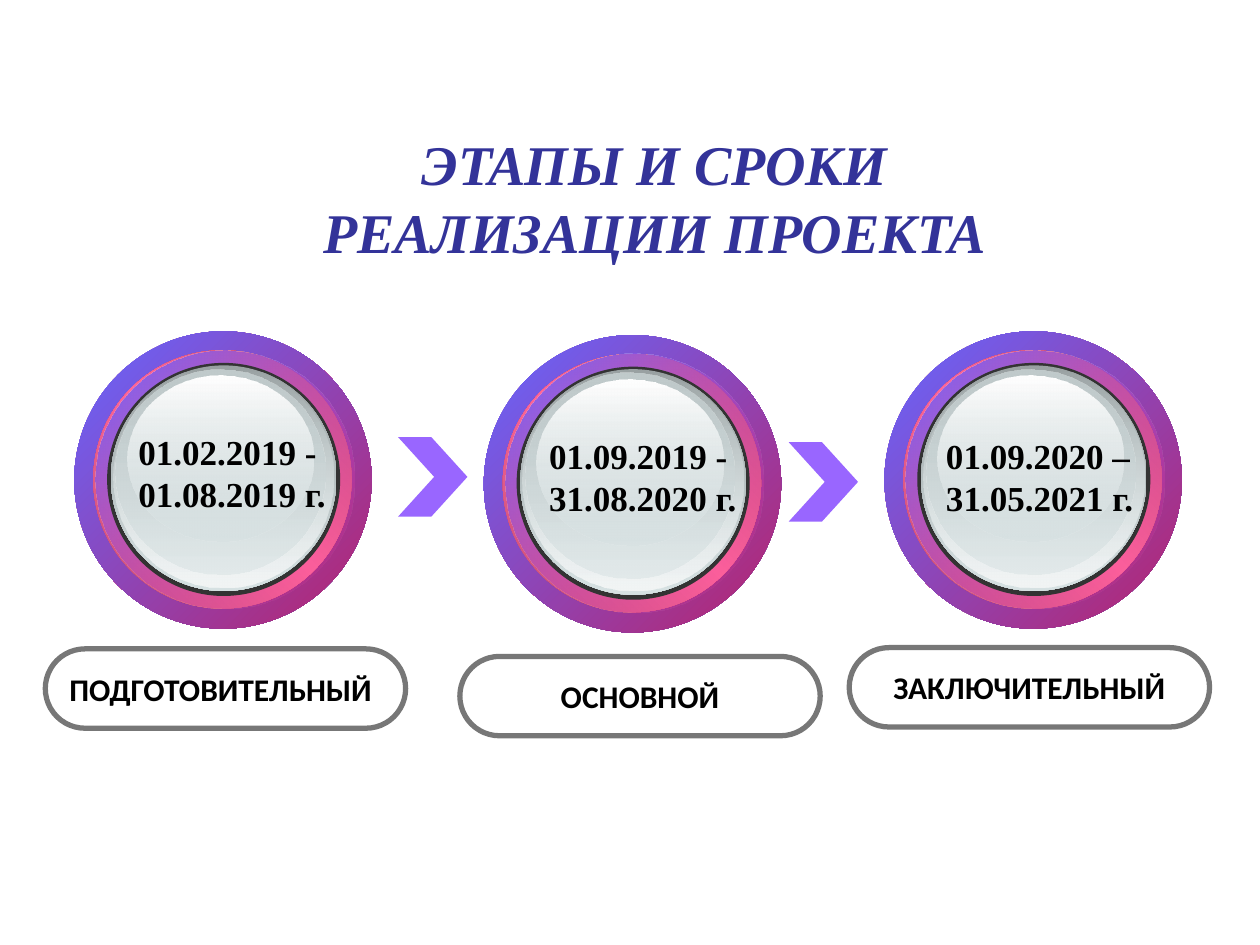
from typing import NamedTuple

from lxml.etree import SubElement
from pptx import Presentation
from pptx.dml.color import RGBColor
from pptx.enum.shapes import MSO_SHAPE
from pptx.enum.text import MSO_ANCHOR, MSO_AUTO_SIZE, PP_ALIGN
from pptx.oxml.ns import qn
from pptx.util import Emu, Pt

SCALE = 9144  # EMU per px, 100 px to the inch
ROMAN = "Times New Roman"


class Stop(NamedTuple):
    pos: int
    color: str
    alpha: int = 100


class Layer(NamedTuple):
    """One ellipse of a disk, placed from the disk's corner."""
    x: int
    y: int
    w: int
    h: int
    angle: int
    stops: tuple[Stop, ...]


class Stage(NamedTuple):
    name: str
    dates: tuple[str, str]
    disk: tuple[int, int]
    text: tuple[int, int]
    pill: tuple[int, int]
    align: PP_ALIGN


LAYERS = (
    Layer(0, 0, 236, 236, 45, (Stop(0, "FFFFFF"), Stop(50, "FF3399"), Stop(100, "FFFFFF"))),
    Layer(0, 0, 236, 236, 45, (Stop(0, "6666FF"), Stop(100, "B6246D"))),
    Layer(15, 15, 205, 205, 315, (Stop(0, "C34E75"), Stop(50, "FF6699"), Stop(100, "C34E75"))),
    Layer(17, 15, 205, 205, 45, (Stop(0, "6666FF"), Stop(100, "FF3399", 0))),
    Layer(26, 25, 185, 185, 0, (Stop(0, "333333"),)),
    Layer(29, 27, 179, 179, 90, (Stop(0, "99A1A2"), Stop(100, "D6E1E2"))),
    Layer(31, 28, 175, 175, 90, (Stop(0, "D6E1E2", 0), Stop(100, "F2F5F5"))),
    Layer(33, 30, 166, 163, 90, (Stop(0, "C1CBCC"), Stop(100, "D6E1E2", 48))),
    Layer(42, 35, 148, 132, 90, (Stop(0, "FFFFFF"), Stop(100, "D6E1E2", 38))),
)

STAGES = (
    Stage("ПОДГОТОВИТЕЛЬНЫЙ", ("01.02.2019 -", "01.08.2019 г."),
          (59, 263), (100, 337), (36, 515), PP_ALIGN.LEFT),
    Stage("ОСНОВНОЙ", ("01.09.2019 -", "31.08.2020 г."),
          (384, 266), (426, 340), (365, 521), PP_ALIGN.CENTER),
    Stage("ЗАКЛЮЧИТЕЛЬНЫЙ", ("01.09.2020 –", "31.05.2021 г."),
          (702, 263), (741, 340), (674, 514), PP_ALIGN.CENTER),
)

ARROWS = ((316, 347), (626, 351))


def px(*vals: int) -> list[Emu]:
    return [Emu(val * SCALE) for val in vals]


def rgb(code: str) -> RGBColor:
    return RGBColor.from_string(code)


def put(shapes, kind: MSO_SHAPE, x: int, y: int, w: int, h: int):
    """Add a preset shape with no shadow and no line."""
    shape = shapes.add_shape(kind, *px(x, y, w, h))
    shape.shadow.inherit = False
    shape.line.fill.background()
    return shape


def paint(shape, color: str) -> None:
    shape.fill.solid()
    shape.fill.fore_color.rgb = rgb(color)


def blend(shape, angle: int, stops: tuple[Stop, ...]) -> None:
    """Fill with a gradient whose angle runs clockwise."""
    shape.fill.gradient()
    shape.fill.gradient_angle = (360 - angle) % 360
    chain = next(shape.element.iter(qn("a:gsLst")))
    for old in list(chain):
        chain.remove(old)
    for stop in stops:
        node = SubElement(chain, qn("a:gs"), pos=str(stop.pos * 1000))
        tint = SubElement(node, qn("a:srgbClr"), val=stop.color)
        if stop.alpha < 100:
            SubElement(tint, qn("a:alpha"), val=str(stop.alpha * 1000))


def write(frame, lines: tuple[str, ...], align: PP_ALIGN, form: dict, color: str) -> None:
    for num, line in enumerate(lines):
        para = frame.add_paragraph() if num else frame.paragraphs[0]
        para.alignment = align
        run = para.add_run()
        run.text = line
        for key, val in form.items():
            setattr(run.font, key, val)
        run.font.color.rgb = rgb(color)


def draw_title(slide) -> None:
    frame = slide.shapes.add_textbox(*px(169, 76, 701, 161)).text_frame
    frame.word_wrap = True
    frame.vertical_anchor = MSO_ANCHOR.MIDDLE
    form = {"name": ROMAN, "size": Pt(32), "bold": True, "italic": True}
    write(frame, ("ЭТАПЫ И СРОКИ РЕАЛИЗАЦИИ ПРОЕКТА",), PP_ALIGN.CENTER, form, "333399")


def draw_arrow(slide, x: int, y: int) -> None:
    arrow = put(slide.shapes, MSO_SHAPE.CHEVRON, x, y, 55, 63)
    arrow.adjustments[0] = 0.52
    paint(arrow, "9966FF")


def draw_disk(slide, x: int, y: int) -> None:
    group = slide.shapes.add_group_shape()
    for layer in LAYERS:
        disk = put(group.shapes, MSO_SHAPE.OVAL, x + layer.x, y + layer.y, layer.w, layer.h)
        if len(layer.stops) == 1:
            paint(disk, layer.stops[0].color)
        else:
            blend(disk, layer.angle, layer.stops)


def draw_pill(slide, stage: Stage) -> None:
    pill = put(slide.shapes, MSO_SHAPE.ROUNDED_RECTANGLE, *stage.pill, 286, 63)
    pill.adjustments[0] = 0.5
    pill.fill.background()
    pill.line.color.rgb = rgb("777777")
    pill.line.width = Pt(3)
    frame = pill.text_frame
    frame.word_wrap = False
    frame.vertical_anchor = MSO_ANCHOR.MIDDLE
    form = {"name": "Calibri", "size": Pt(18), "bold": True}
    write(frame, (stage.name,), stage.align, form, "000000")


def draw_dates(slide, stage: Stage) -> None:
    frame = slide.shapes.add_textbox(*px(*stage.text, 170, 77)).text_frame
    frame.word_wrap = False
    frame.auto_size = MSO_AUTO_SIZE.SHAPE_TO_FIT_TEXT
    form = {"name": ROMAN, "size": Pt(20), "bold": True}
    write(frame, stage.dates, PP_ALIGN.LEFT, form, "000000")


def main() -> None:
    deck = Presentation()
    deck.slide_width, deck.slide_height = px(1000, 750)
    slide = deck.slides.add_slide(deck.slide_layouts[6])
    draw_title(slide)
    for spot in ARROWS:
        draw_arrow(slide, *spot)
    for stage in STAGES:
        draw_disk(slide, *stage.disk)
        draw_pill(slide, stage)
        draw_dates(slide, stage)
    deck.save("out.pptx")


if __name__ == "__main__":
    main()
